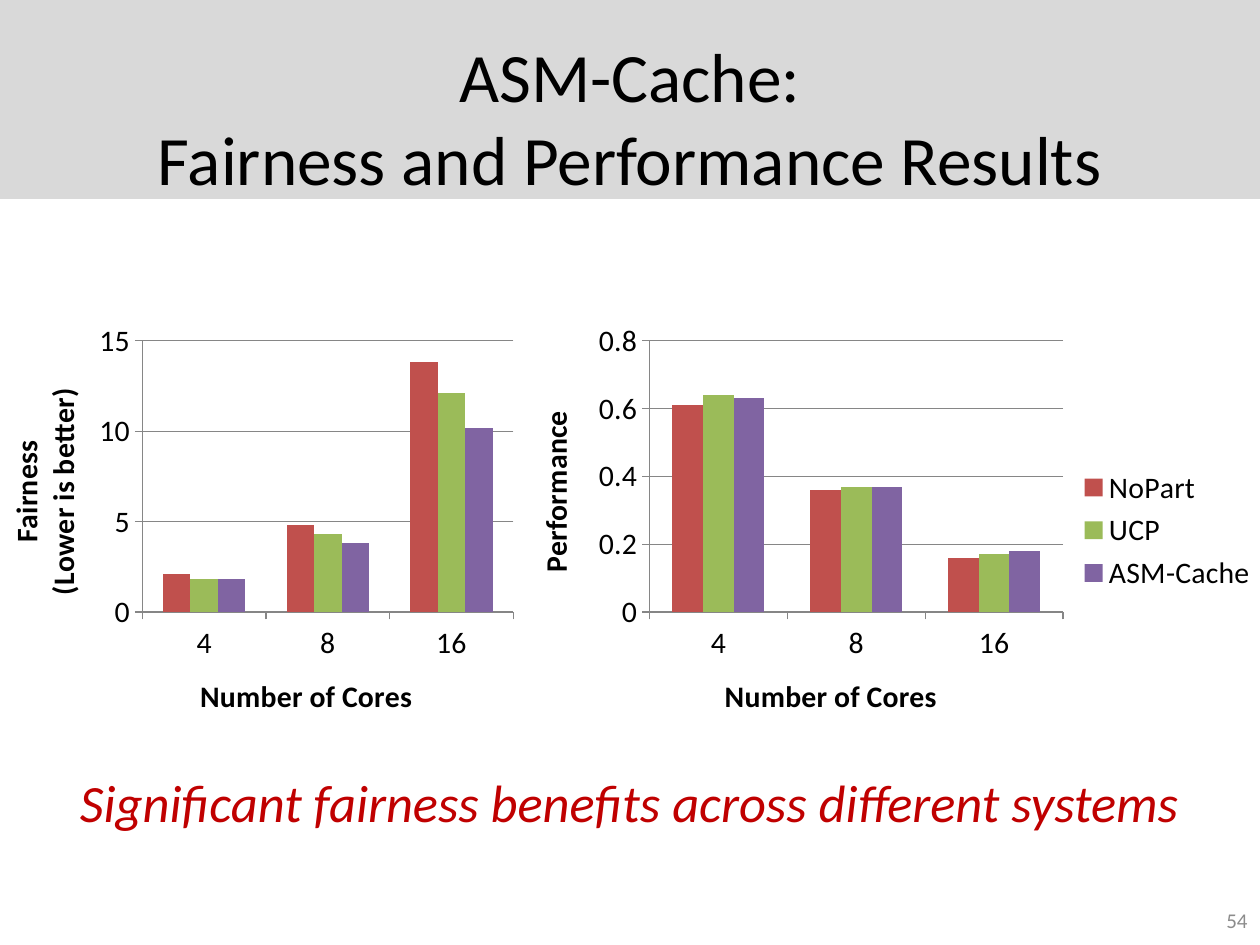
from lxml import etree
from pptx import Presentation
from pptx.chart.data import CategoryChartData
from pptx.dml.color import RGBColor
from pptx.enum.chart import XL_CHART_TYPE as ChartType, XL_LEGEND_POSITION as LegendPos
from pptx.enum.chart import XL_TICK_MARK as Tick
from pptx.enum.shapes import MSO_SHAPE as Shape
from pptx.enum.text import MSO_ANCHOR as Anchor, PP_ALIGN as Align
from pptx.oxml.ns import qn
from pptx.util import Cm, Pt

FONT = "Calibri"
BLACK = RGBColor(0x00, 0x00, 0x00)
BAND_GREY = RGBColor(0xD9, 0xD9, 0xD9)
NUMBER_GREY = RGBColor(0x8C, 0x8C, 0x8C)
LINE_GREY = RGBColor(0x86, 0x86, 0x86)
DARK_RED = RGBColor(0xC0, 0x00, 0x00)
SERIES_COLORS = {
    "NoPart": RGBColor(0xC0, 0x50, 0x4D),
    "UCP": RGBColor(0x9B, 0xBB, 0x59),
    "ASM-Cache": RGBColor(0x80, 0x64, 0xA2),
}
CORES = ["4", "8", "16"]
FAIRNESS = [(2.1, 4.8, 13.8), (1.8, 4.3, 12.1), (1.8, 3.8, 10.2)]
PERFORMANCE = [(0.61, 0.36, 0.16), (0.64, 0.37, 0.17), (0.63, 0.37, 0.18)]
CHART_TOP, CHART_HEIGHT = 6.35, 8.68


def style_font(font, size, color=BLACK, bold=False, italic=False):
    font.name, font.size = FONT, Pt(size)
    font.bold, font.italic = bold, italic
    font.color.rgb = color


def add_text(s, text, left, top, width, height, align=Align.CENTER,
             anchor=Anchor.MIDDLE, **font):
    tf = s.shapes.add_textbox(Cm(left), Cm(top), Cm(width), Cm(height)).text_frame
    tf.word_wrap = True
    tf.vertical_anchor = anchor
    p = tf.paragraphs[0]
    p.text = text
    p.alignment = align
    for r in p.runs:
        style_font(r.font, **font)


def add_title_band(s, width):
    sp = s.shapes.add_shape(Shape.RECTANGLE, 0, 0, width, Cm(4.01))
    sp.shadow.inherit = False
    sp.fill.solid()
    sp.fill.fore_color.rgb = BAND_GREY
    sp.line.fill.background()


def place_plot(chart, x, width, y=0.06, height=0.63):
    """Fix the inner plot area, in fractions of the chart."""
    area = chart._chartSpace.chart.plotArea
    for old in area.findall(qn("c:layout")):
        area.remove(old)
    layout = etree.Element(qn("c:layout"))
    area.insert(0, layout)
    manual = etree.SubElement(layout, qn("c:manualLayout"))
    settings = {"layoutTarget": "inner", "xMode": "edge", "yMode": "edge",
                "x": x, "y": y, "w": width, "h": height}
    for tag, value in settings.items():
        etree.SubElement(manual, qn(f"c:{tag}")).set("val", str(value))


def style_axis(axis, title):
    axis.major_tick_mark, axis.minor_tick_mark = Tick.OUTSIDE, Tick.NONE
    axis.format.line.color.rgb = LINE_GREY
    tf = axis.axis_title.text_frame
    tf.text = title
    for p in tf.paragraphs:
        for r in p.runs:
            style_font(r.font, 17, bold=True)


def add_bar_chart(s, left, width, rows, title, top_value, step, plot_x, plot_width,
                  legend=False):
    data = CategoryChartData()
    data.categories = CORES
    for name, values in zip(SERIES_COLORS, rows):
        data.add_series(name, values)
    chart = s.shapes.add_chart(ChartType.COLUMN_CLUSTERED, Cm(left), Cm(CHART_TOP),
                               Cm(width), Cm(CHART_HEIGHT), data).chart
    chart.has_title = False
    style_font(chart.font, 17)

    plot = chart.plots[0]
    plot.gap_width, plot.overlap, plot.vary_by_categories = 50, 0, False
    plot.gap_width = 150
    for series in plot.series:
        series.format.fill.solid()
        series.format.fill.fore_color.rgb = SERIES_COLORS[series.name]

    style_axis(chart.category_axis, "Number of Cores")
    axis = chart.value_axis
    style_axis(axis, title)
    axis.minimum_scale, axis.maximum_scale, axis.major_unit = 0, top_value, step
    axis.major_gridlines.format.line.color.rgb = LINE_GREY

    chart.has_legend = legend
    if legend:
        chart.legend.position = LegendPos.RIGHT
        chart.legend.include_in_layout = False
    place_plot(chart, plot_x, plot_width)


def main():
    prs = Presentation()
    prs.slide_width, prs.slide_height = Cm(25.4), Cm(19.05)
    s = prs.slides.add_slide(prs.slide_layouts[6])

    add_title_band(s, prs.slide_width)
    add_text(s, "ASM-Cache:\nFairness and Performance Results",
             1.27, 0.76, 22.86, 3.18, size=39.6)
    add_text(s, "54", 19.48, 18.03, 5.92, 1.02, align=Align.RIGHT,
             size=12, color=NUMBER_GREY)
    add_text(s, "Significant fairness benefits across different systems",
             0.84, 15.39, 23.7, 1.55, anchor=Anchor.TOP,
             size=30, color=DARK_RED, italic=True)
    add_bar_chart(s, -0.43, 11, FAIRNESS, "Fairness\n(Lower is better)",
                  15, 5, plot_x=0.3, plot_width=0.68)
    add_bar_chart(s, 10.16, 15.44, PERFORMANCE, "Performance",
                  0.8, 0.2, plot_x=0.19, plot_width=0.54, legend=True)
    prs.save("out.pptx")


if __name__ == "__main__":
    main()
